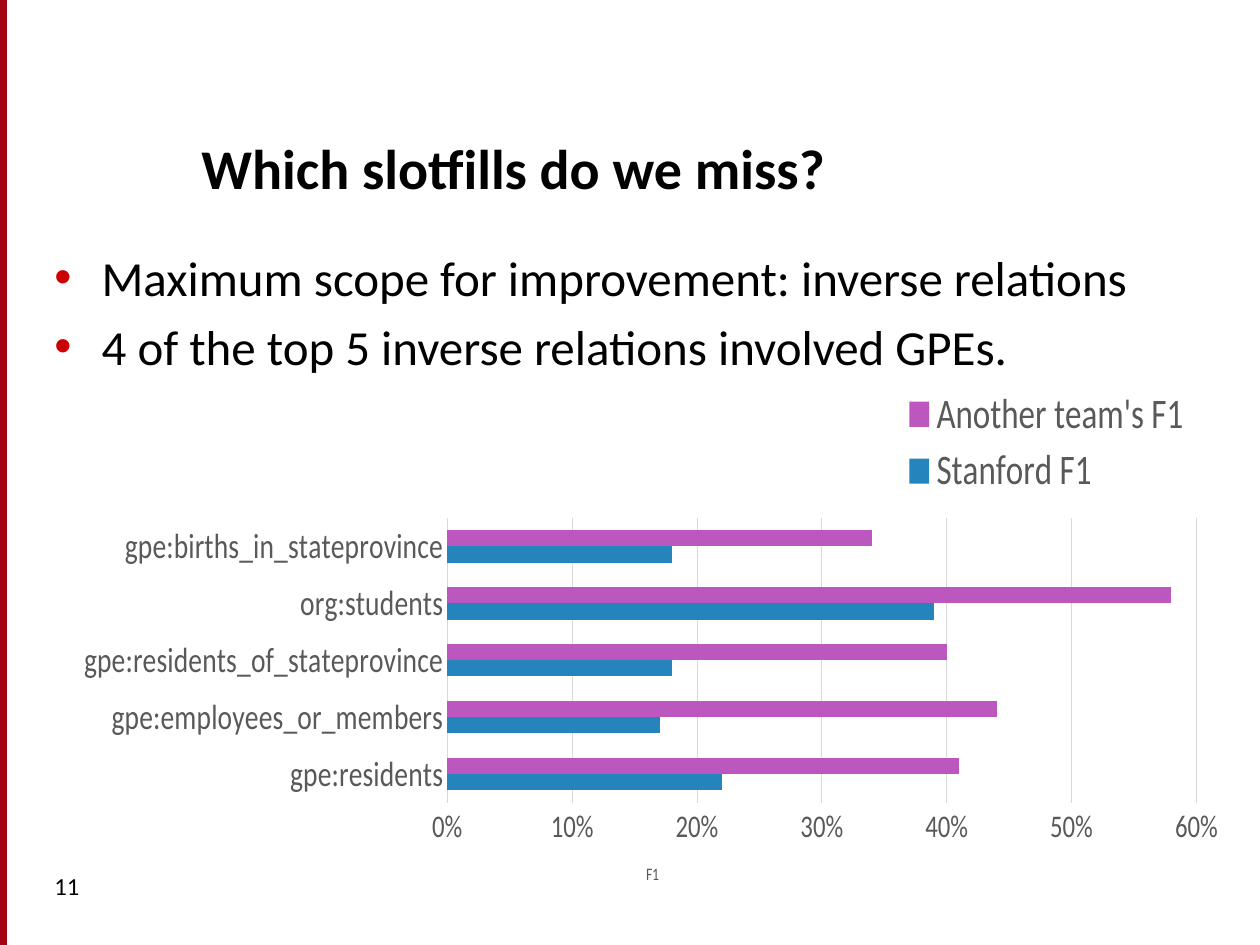
from pptx import Presentation
from pptx.chart.data import CategoryChartData
from pptx.dml.color import RGBColor
from pptx.enum.chart import XL_CHART_TYPE, XL_LEGEND_POSITION, XL_TICK_MARK
from pptx.enum.shapes import MSO_SHAPE
from pptx.enum.text import MSO_ANCHOR
from pptx.oxml import parse_xml
from pptx.oxml.ns import nsdecls
from pptx.util import Pt

FONT = "Calibri"
BLACK, GRAY, GRID = "000000", "595959", "D9D9D9"
EDGE, EDGE_LINE, BULLET = "A40508", "A4001D", "CC0000"
RELATIONS = ["gpe:residents", "gpe:employees_or_members",
             "gpe:residents_of_stateprovince", "org:students",
             "gpe:births_in_stateprovince"]
SCORES = [
    ("Stanford F1", [0.22, 0.17, 0.18, 0.39, 0.18], "2584BB"),
    ("Another team's F1", [0.41, 0.44, 0.40, 0.58, 0.34], "BB57BE"),
]


def color(hex_code):
    return RGBColor.from_string(hex_code)


def style_font(font, size, hex_code, bold=False):
    font.name = FONT
    font.size = Pt(size)
    font.bold = bold
    font.color.rgb = color(hex_code)


def add_bullet(paragraph, indent):
    properties = paragraph._p.get_or_add_pPr()
    properties.set("marL", str(Pt(indent)))
    properties.set("indent", str(-Pt(indent)))
    for element in (f'<a:buClr {nsdecls("a")}><a:srgbClr val="{BULLET}"/></a:buClr>',
                    f'<a:buFont {nsdecls("a")} typeface="Arial"/>',
                    f'<a:buChar {nsdecls("a")} char="•"/>'):
        properties.append(parse_xml(element))


def add_text(slide, box, lines, size, bold=False, anchor=MSO_ANCHOR.TOP,
             bullet_indent=None, gap=0):
    frame = slide.shapes.add_textbox(*map(Pt, box)).text_frame
    frame.word_wrap = True
    frame.vertical_anchor = anchor
    for index, line in enumerate(lines):
        paragraph = frame.add_paragraph() if index else frame.paragraphs[0]
        paragraph.text = line
        if index:
            paragraph.space_before = Pt(gap)
        if bullet_indent:
            add_bullet(paragraph, bullet_indent)
        style_font(paragraph.font, size, BLACK, bold)


def add_edge(slide, box):
    edge = slide.shapes.add_shape(MSO_SHAPE.RECTANGLE, *map(Pt, box))
    edge.shadow.inherit = False
    edge.fill.solid()
    edge.fill.fore_color.rgb = color(EDGE)
    edge.line.color.rgb = color(EDGE_LINE)
    edge.line.width = Pt(0.75)


def manual_layout(x, y, w=None, h=None, inner=False):
    """Layout in fractions of the chart's width and height."""
    target = '<c:layoutTarget val="inner"/>' if inner else ""
    modes = '<c:xMode val="edge"/><c:yMode val="edge"/>'
    sides = "".join(f'<c:{side} val="{value}"/>'
                    for side, value in zip("xywh", (x, y, w, h))
                    if value is not None)
    return parse_xml(f'<c:layout {nsdecls("c")}><c:manualLayout>{target}{modes}'
                     f'{sides}</c:manualLayout></c:layout>')


def set_layout(parent, layout, before):
    """Put the layout in place of an earlier one, ahead of the named elements."""
    for old in parent.xpath("./c:layout"):
        parent.remove(old)
    parent.insert_element_before(layout, *before)


def style_axis(axis, size, tick_line):
    axis.major_tick_mark = axis.minor_tick_mark = XL_TICK_MARK.NONE
    style_font(axis.tick_labels.font, size, GRAY)
    if tick_line:
        axis.format.line.color.rgb = color(GRID)
        axis.format.line.width = Pt(0.75)
    else:
        axis.format.line.fill.background()


def add_score_chart(slide, box):
    data = CategoryChartData(number_format="0%")
    data.categories = RELATIONS
    for name, values, _ in SCORES:
        data.add_series(name, values)
    chart = slide.shapes.add_chart(
        XL_CHART_TYPE.BAR_CLUSTERED, *map(Pt, box), data).chart
    style_font(chart.font, 10, BLACK)
    chart.has_title = False

    # Bars
    plot = chart.plots[0]
    plot.gap_width = 150
    plot.overlap = 0
    plot.vary_by_categories = False
    for series, (_, _, fill) in zip(plot.series, SCORES):
        series.format.fill.solid()
        series.format.fill.fore_color.rgb = color(fill)
    plot_area = chart._chartSpace.chart.plotArea
    for old in plot_area.xpath("./c:layout"):
        plot_area.remove(old)
    plot_area.insert(0, manual_layout(0.16, 0.27, 0.84, 0.55, inner=True))

    # Axes
    style_axis(chart.category_axis, 20, True)
    scale = chart.value_axis
    style_axis(scale, 18, False)
    scale.minimum_scale, scale.maximum_scale, scale.major_unit = 0, 0.6, 0.1
    scale.tick_labels.number_format = "0%"
    scale.tick_labels.number_format_is_linked = False
    scale.major_gridlines.format.line.color.rgb = color(GRID)
    scale.major_gridlines.format.line.width = Pt(0.75)
    caption = scale.axis_title
    caption.text_frame.text = "F1"
    style_font(caption.text_frame.paragraphs[0].runs[0].font, 10, GRAY)
    set_layout(caption._element, manual_layout(0.38, 0.93),
               ("c:overlay", "c:spPr", "c:txPr"))

    # Legend
    chart.has_legend = True
    legend = chart.legend
    legend.position = XL_LEGEND_POSITION.CORNER
    legend.include_in_layout = False
    style_font(legend.font, 24, GRAY)
    set_layout(legend._element, manual_layout(0.67, 0.01, 0.33, 0.23),
               ("c:overlay", "c:spPr", "c:txPr"))


def main():
    deck = Presentation()
    deck.slide_width, deck.slide_height = Pt(720), Pt(540)
    slide = deck.slides.add_slide(deck.slide_layouts[6])

    add_edge(slide, (0, 0, 3.5, 540))
    add_text(slide, (24, 494, 156, 36), ["11"], 14)
    add_text(slide, (108, 40, 588, 78), ["Which slotfills do we miss?"], 32,
             bold=True, anchor=MSO_ANCHOR.BOTTOM)
    add_text(slide, (24, 138, 660, 138),
             ["Maximum scope for improvement: inverse relations",
              "4 of the top 5 inverse relations involved GPEs."], 28,
             bullet_indent=27, gap=5.6)
    add_score_chart(slide, (48, 216, 648, 296))

    deck.save("out.pptx")


if __name__ == "__main__":
    main()
